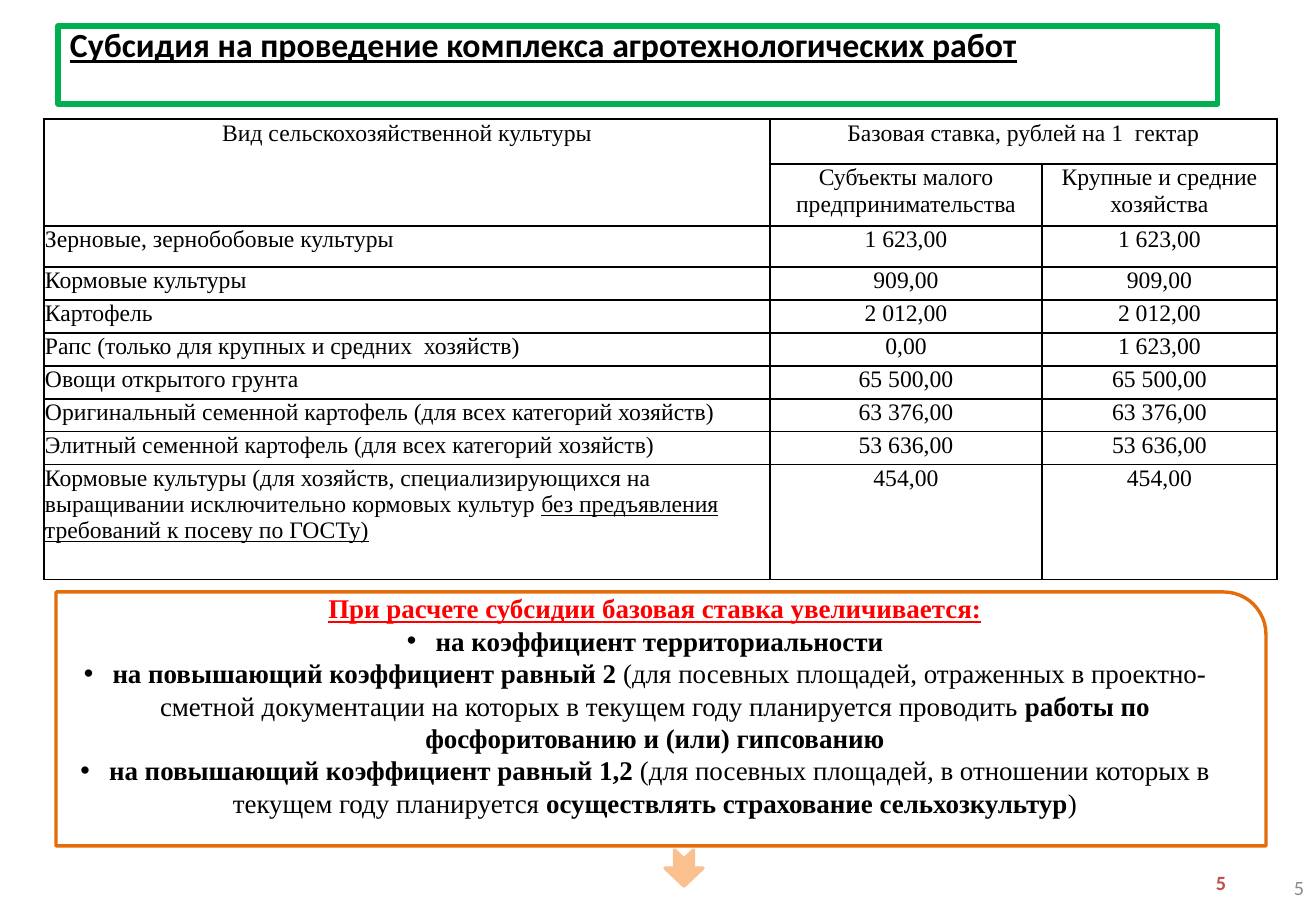
"""Build the slide on subsidy rates for agrotechnical works."""
from lxml import etree
from pptx import Presentation
from pptx import util as u
from pptx.dml.color import RGBColor
from pptx.enum import shapes, text
from pptx.oxml import ns

COLORS = {"white": "FFFFFF", "black": "000000", "green": "00B050", "orange": "E46C0A",
          "peach": "FAC090", "red": "FF0000", "brick": "C0504D", "grey": "8C8C8C"}
SERIF, SANS = "Times New Roman", "Calibri"
LEFT, CENTER, RIGHT = text.PP_ALIGN.LEFT, text.PP_ALIGN.CENTER, text.PP_ALIGN.RIGHT
SCALE = 914400 / 121.5

TITLE = "Субсидия на проведение комплекса агротехнологических работ"
HEADERS = [
    ("Вид сельскохозяйственной культуры", "Базовая ставка, рублей на 1  гектар", ""),
    ("", "Субъекты малого предпринимательства", "Крупные и средние хозяйства"),
]
RATES = [
    ("Зерновые, зернобобовые культуры", "1 623,00", "1 623,00"),
    ("Кормовые культуры", "909,00", "909,00"),
    ("Картофель", "2 012,00", "2 012,00"),
    ("Рапс (только для крупных и средних  хозяйств)", "0,00", "1 623,00"),
    ("Овощи открытого грунта", "65 500,00", "65 500,00"),
    ("Оригинальный семенной картофель (для всех категорий хозяйств)", "63 376,00", "63 376,00"),
    ("Элитный семенной картофель (для всех категорий хозяйств)", "53 636,00", "53 636,00"),
    ("Кормовые культуры (для хозяйств, специализирующихся на выращивании "
     "исключительно кормовых культур ", "454,00", "454,00"),
]
LAST_CROP_NOTE = "без предъявления требований к посеву по ГОСТу)"
COLUMNS = [726, 272, 235]
ROWS = [45, 62, 41, 33, 33, 33, 33, 33, 33, 115]
INCREASE_TITLE = "При расчете субсидии базовая ставка увеличивается:"
INCREASES = [
    [("на коэффициент территориальности", True)],
    [("на повышающий коэффициент равный 2 ", True),
     ("(для посевных площадей, отраженных в проектно-сметной документации "
      "на которых в текущем году планируется проводить ", False),
     ("работы по фосфоритованию и (или) гипсованию", True)],
    [("на повышающий коэффициент равный 1,2 ", True),
     ("(для посевных площадей, в отношении которых в текущем году планируется ", False),
     ("осуществлять страхование сельхозкультур", True), (")", False)],
]
PAGE_NUMBER = "5"
NUMBERS = [((1185, 868, 53, 29), "brick", True), ((943, 863, 373, 48), "grey", False)]


def px(length):
    return u.Emu(round(length * SCALE))


def color(name):
    return RGBColor.from_string(COLORS[name])


def add_run(para, words, size, font, ink="black", bold=False, underline=False):
    span = para.add_run()
    span.text = words
    span.font.size = u.Pt(size)
    span.font.name = font
    span.font.color.rgb = color(ink)
    span.font.bold = bold
    span.font.underline = underline


def add_box(page, kind, place, fill, line, width):
    box = page.shapes.add_shape(kind, *map(px, place))
    box.shadow.inherit = False
    box.fill.solid()
    box.fill.fore_color.rgb = color(fill)
    box.line.color.rgb = color(line)
    box.line.width = u.Pt(width)
    box.text_frame.word_wrap = True
    box.text_frame.vertical_anchor = text.MSO_ANCHOR.TOP
    return box


def add_bullet(para):
    props = para._p.get_or_add_pPr()
    etree.SubElement(props, ns.qn("a:buFont"), typeface="Arial")
    etree.SubElement(props, ns.qn("a:buChar"), char="•")


def style_cell(cell):
    cell.margin_left = cell.margin_right = cell.margin_top = px(1)
    cell.margin_bottom = 0
    props = cell._tc.get_or_add_tcPr()
    for side in ("lnL", "lnR", "lnT", "lnB"):
        border = etree.SubElement(props, ns.qn(f"a:{side}"), w=str(u.Pt(1)))
        solid = etree.SubElement(border, ns.qn("a:solidFill"))
        etree.SubElement(solid, ns.qn("a:srgbClr"), val=COLORS["black"])
    cell.fill.solid()
    cell.fill.fore_color.rgb = color("white")


def add_title(page):
    box = add_box(page, shapes.MSO_SHAPE.RECTANGLE, (58, 26, 1160, 78), "white", "green", 3)
    para = box.text_frame.paragraphs[0]
    para.alignment = LEFT
    para.line_spacing = 0.8
    add_run(para, TITLE, 20, SANS, bold=True, underline=True)


def add_rates(page):
    lines = HEADERS + RATES
    place = (44, 119, sum(COLUMNS), sum(ROWS))
    table = page.shapes.add_table(len(lines), len(COLUMNS), *map(px, place)).table
    for column, width in zip(table.columns, COLUMNS):
        column.width = px(width)
    for row, height in zip(table.rows, ROWS):
        row.height = px(height)
    for r, line in enumerate(lines):
        for c, words in enumerate(line):
            cell = table.cell(r, c)
            style_cell(cell)
            para = cell.text_frame.paragraphs[0]
            para.alignment = LEFT if c == 0 and r >= len(HEADERS) else CENTER
            if words:
                add_run(para, words, 14, SERIF)
    last_crop = table.cell(len(lines) - 1, 0).text_frame.paragraphs[0]
    add_run(last_crop, LAST_CROP_NOTE, 14, SERIF, underline=True)
    table.cell(0, 0).merge(table.cell(1, 0))
    table.cell(0, 1).merge(table.cell(0, 2))


def add_increases(page):
    box = add_box(page, shapes.MSO_SHAPE.ROUND_1_RECTANGLE, (56, 592, 1210, 254),
                  "white", "orange", 2)
    frame = box.text_frame
    frame.margin_top = 0
    para = frame.paragraphs[0]
    para.alignment = CENTER
    add_run(para, INCREASE_TITLE, 16, SERIF, "red", bold=True, underline=True)
    for parts in INCREASES:
        para = frame.add_paragraph()
        para.alignment = CENTER
        add_bullet(para)
        for words, bold in parts:
            add_run(para, words, 16, SERIF, bold=bold)


def add_numbers(page):
    for place, ink, bold in NUMBERS:
        frame = page.shapes.add_textbox(*map(px, place)).text_frame
        frame.word_wrap = True
        frame.vertical_anchor = text.MSO_ANCHOR.MIDDLE
        para = frame.paragraphs[0]
        para.alignment = RIGHT
        add_run(para, PAGE_NUMBER, 12, SANS, ink, bold)


def main():
    deck = Presentation()
    deck.slide_width, deck.slide_height = px(1316), px(911)
    page = deck.slides.add_slide(deck.slide_layouts[6])
    add_numbers(page)
    add_title(page)
    add_rates(page)
    add_increases(page)
    arrow = add_box(page, shapes.MSO_SHAPE.NOTCHED_RIGHT_ARROW, (666, 849, 36, 38),
                    "peach", "peach", 2)
    arrow.rotation = 90
    deck.save("out.pptx")


if __name__ == "__main__":
    main()
